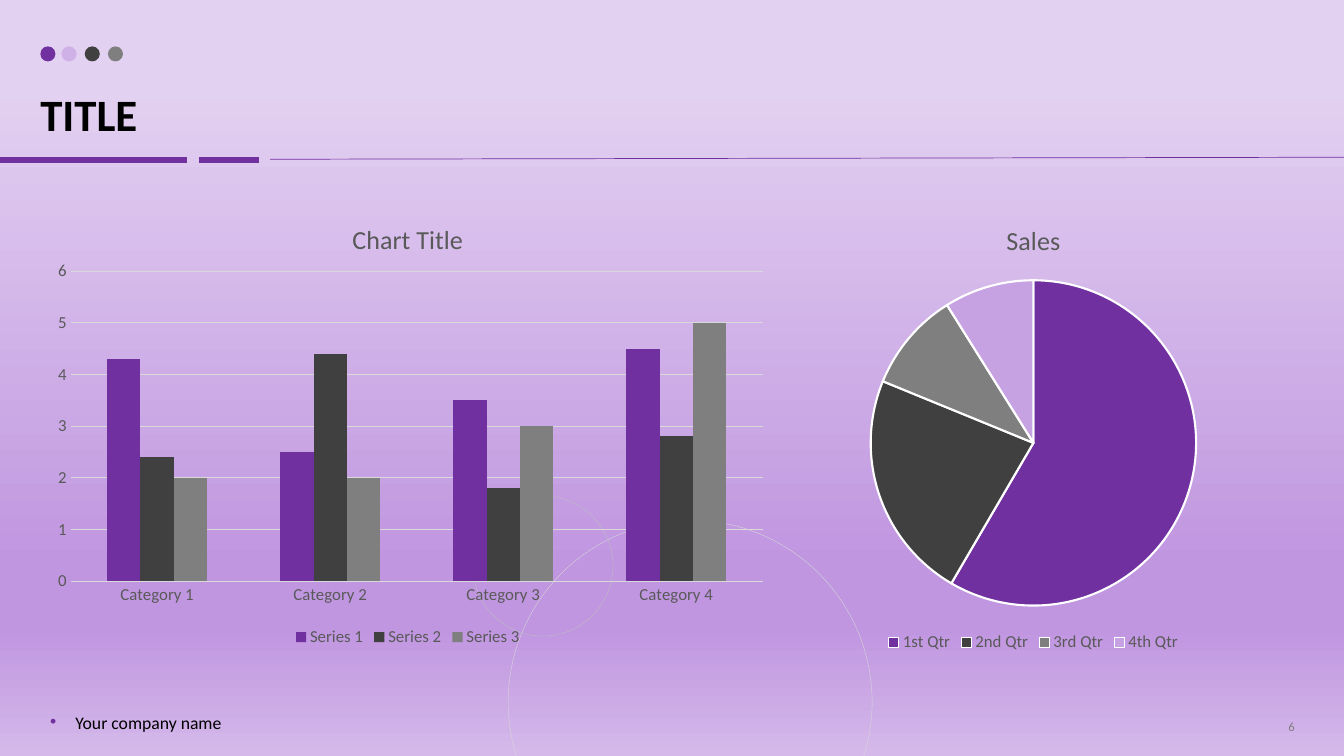
"""Build a title slide with a clustered column chart and a pie chart on a lilac gradient."""
from lxml import etree
from pptx import Presentation
from pptx.chart.data import CategoryChartData
from pptx.dml.color import RGBColor
from pptx.enum.chart import XL_CHART_TYPE, XL_LEGEND_POSITION, XL_TICK_MARK
from pptx.enum.shapes import MSO_CONNECTOR, MSO_SHAPE
from pptx.enum.text import MSO_ANCHOR, PP_ALIGN
from pptx.oxml.ns import qn
from pptx.util import Inches, Pt

COLUMN, PIE = XL_CHART_TYPE.COLUMN_CLUSTERED, XL_CHART_TYPE.PIE
BOTTOM_LEGEND, NO_TICK = XL_LEGEND_POSITION.BOTTOM, XL_TICK_MARK.NONE
STRAIGHT, OVAL = MSO_CONNECTOR.STRAIGHT, MSO_SHAPE.OVAL
TOP, MIDDLE, BOTTOM = MSO_ANCHOR.TOP, MSO_ANCHOR.MIDDLE, MSO_ANCHOR.BOTTOM
LEFT, RIGHT = PP_ALIGN.LEFT, PP_ALIGN.RIGHT

THEME = {
    "font": "Calibri",
    "purple": "7030A0", "lilac": "C7A2E3", "charcoal": "404040", "gray": "7F7F7F",
    "text": "000000", "chart_text": "595959", "grid": "D9D9D9", "ring": "BFBFBF", "white": "FFFFFF",
    "background": [(11, "E3D1F1"), (75, "C096E0"), (83, "C096E0"), (100, "D5B9EA")],
    "title_size": 32, "chart_title_size": 18.6, "label_size": 12, "footer_size": 12.6, "number_size": 9,
}
PALETTE = ["purple", "charcoal", "gray", "lilac"]
CELL = 0.1
MARGIN = 4


def cells(*counts):
    """Turn counts of grid cells into lengths."""
    return [Inches(count * CELL) for count in counts]


def paint(target, color, **formats):
    """Colour a font or a line and set its other attributes."""
    for name, value in formats.items():
        setattr(target, name, value)
    color_format = target.color
    color_format.rgb = RGBColor.from_string(THEME[color])


presentation = Presentation()
presentation.slide_width, presentation.slide_height = Inches(13.33), Inches(7.5)
slide = presentation.slides.add_slide(presentation.slide_layouts[6])
shapes = slide.shapes

background = slide.background.fill
background.gradient()
background.gradient_angle = 270
stops = slide.element.find(".//" + qn("a:gsLst"))
for stop in list(stops):
    stops.remove(stop)
for position, color in THEME["background"]:
    stop = etree.SubElement(stops, qn("a:gs"), pos=str(position * 1000))
    etree.SubElement(stop, qn("a:srgbClr"), val=color)

for start_x, start_y, end_x, end_y, weight in [
    (0, 15.9, 18.5, 15.9, 4.5),
    (19.7, 15.9, 25.7, 15.9, 4.5),
    (26.8, 15.8, 133.3, 15.6, 0.5),
]:
    rule = shapes.add_connector(STRAIGHT, *cells(start_x, start_y, end_x, end_y))
    paint(rule.line, "purple", width=Pt(weight))
    etree.SubElement(rule.element.spPr, qn("a:effectLst"))

for left, top, diameter, fill, outline in [
    (4, 4.6, 1.5, "purple", None),
    (6.1, 4.6, 1.5, "lilac", None),
    (8.4, 4.6, 1.5, "charcoal", None),
    (10.7, 4.6, 1.5, "gray", None),
    (50.4, 51.6, 36.1, None, "grid"),
    (46.9, 49.2, 13.9, None, "ring"),
]:
    circle = shapes.add_shape(OVAL, *cells(left, top, diameter, diameter))
    circle.shadow.inherit = False
    if fill:
        circle.fill.solid()
        circle.fill.fore_color.rgb = RGBColor.from_string(THEME[fill])
        circle.line.fill.background()
    else:
        circle.fill.background()
        paint(circle.line, outline, width=Pt(0.25))
    if fill == "lilac":
        color = circle.element.spPr.find(".//" + qn("a:srgbClr"))
        etree.SubElement(color, qn("a:alpha"), val="70000")

for text, box, size, color, frame_formats, paragraph_formats in [
    ("TITLE", (MARGIN, 2.7, 125.4, 11.3), "title_size", "text",
     {"vertical_anchor": BOTTOM, "margin_left": 0, "margin_right": 0, "margin_top": 0, "margin_bottom": 0},
     {"alignment": LEFT, "line_spacing": 0.9}),
    ("Your company name", (MARGIN, 70.7, 24.7, 2.7), "footer_size", "text",
     {"vertical_anchor": TOP}, {"alignment": LEFT, "line_spacing": 0.7, "space_before": Pt(10)}),
    ("6", (99.4, 70.7, 30, 2.7), "number_size", "gray",
     {"vertical_anchor": MIDDLE}, {"alignment": RIGHT}),
]:
    frame = shapes.add_textbox(*cells(*box)).text_frame
    paragraph = frame.paragraphs[0]
    for target, formats in [(frame, {"word_wrap": True, **frame_formats}), (paragraph, paragraph_formats)]:
        for name, value in formats.items():
            setattr(target, name, value)
    run = paragraph.add_run()
    run.text = text
    paint(run.font, color, name=THEME["font"], size=Pt(THEME[size]), bold=size == "title_size")
    if size == "footer_size":
        properties = paragraph._p.get_or_add_pPr()
        properties.set("marL", str(Inches(0.25)))
        properties.set("indent", str(Inches(-0.25)))
        bullet_color = etree.SubElement(properties, qn("a:buClr"))
        etree.SubElement(bullet_color, qn("a:srgbClr"), val=THEME["purple"])
        etree.SubElement(properties, qn("a:buFont"), typeface="Arial")
        etree.SubElement(properties, qn("a:buChar"), char="•")

for kind, box, title, categories, series_values, plot_share in [
    (COLUMN, (3.7, 20.1, 73.5, 44.5), "Chart Title",
     ["Category 1", "Category 2", "Category 3", "Category 4"],
     {"Series 1": (4.3, 2.5, 3.5, 4.5), "Series 2": (2.4, 4.4, 1.8, 2.8), "Series 3": (2, 2, 3, 5)},
     {"x": 0.045, "y": 0.153, "w": 0.934, "h": 0.691}),
    (PIE, (75.6, 20.1, 53.8, 45), "Sales",
     ["1st Qtr", "2nd Qtr", "3rd Qtr", "4th Qtr"],
     {"Sales": (59, 23, 10, 9)},
     {"x": 0.2, "y": 0.17, "w": 0.6, "h": 0.72}),
]:
    data = CategoryChartData()
    data.categories = categories
    for name, values in series_values.items():
        data.add_series(name, values)
    chart = shapes.add_chart(kind, *cells(*box), data).chart
    label = {"color": "chart_text", "name": THEME["font"], "size": Pt(THEME["label_size"])}
    paint(chart.font, **label)
    chart.has_title = True
    title_frame = chart.chart_title.text_frame
    title_frame.text = title
    paint(title_frame.paragraphs[0].runs[0].font,
          **{**label, "size": Pt(THEME["chart_title_size"]), "bold": False})
    chart.has_legend = True
    chart.legend.position = BOTTOM_LEGEND
    chart.legend.include_in_layout = False
    paint(chart.legend.font, **label)

    plot = chart.plots[0]
    if kind == COLUMN:
        plot.vary_by_categories = False
        plot.gap_width, plot.overlap = 219, 0
        colored_parts = list(plot.series)
        category_axis, value_axis = chart.category_axis, chart.value_axis
        for axis in (category_axis, value_axis):
            axis.major_tick_mark = axis.minor_tick_mark = NO_TICK
            paint(axis.tick_labels.font, **label)
        paint(category_axis.format.line, "grid", width=Pt(0.75))
        value_axis.minimum_scale, value_axis.maximum_scale, value_axis.major_unit = 0, 6, 1
        value_axis.format.line.fill.background()
        paint(value_axis.major_gridlines.format.line, "grid", width=Pt(0.75))
    else:
        plot.vary_by_categories = True
        colored_parts = [plot.series[0].points[index] for index in range(len(categories))]
    for part, color in zip(colored_parts, PALETTE):
        part.format.fill.solid()
        part.format.fill.fore_color.rgb = RGBColor.from_string(THEME[color])
        if kind == PIE:
            paint(part.format.line, "white", width=Pt(1.5))

    plot_area = chart.element.find(".//" + qn("c:plotArea"))
    for old_layout in plot_area.findall(qn("c:layout")):
        plot_area.remove(old_layout)
    layout = etree.Element(qn("c:layout"))
    plot_area.insert(0, layout)
    manual = etree.SubElement(layout, qn("c:manualLayout"))
    for name, value in {"layoutTarget": "inner", "xMode": "edge", "yMode": "edge", **plot_share}.items():
        etree.SubElement(manual, qn("c:" + name), val=str(value))

presentation.save("out.pptx")
